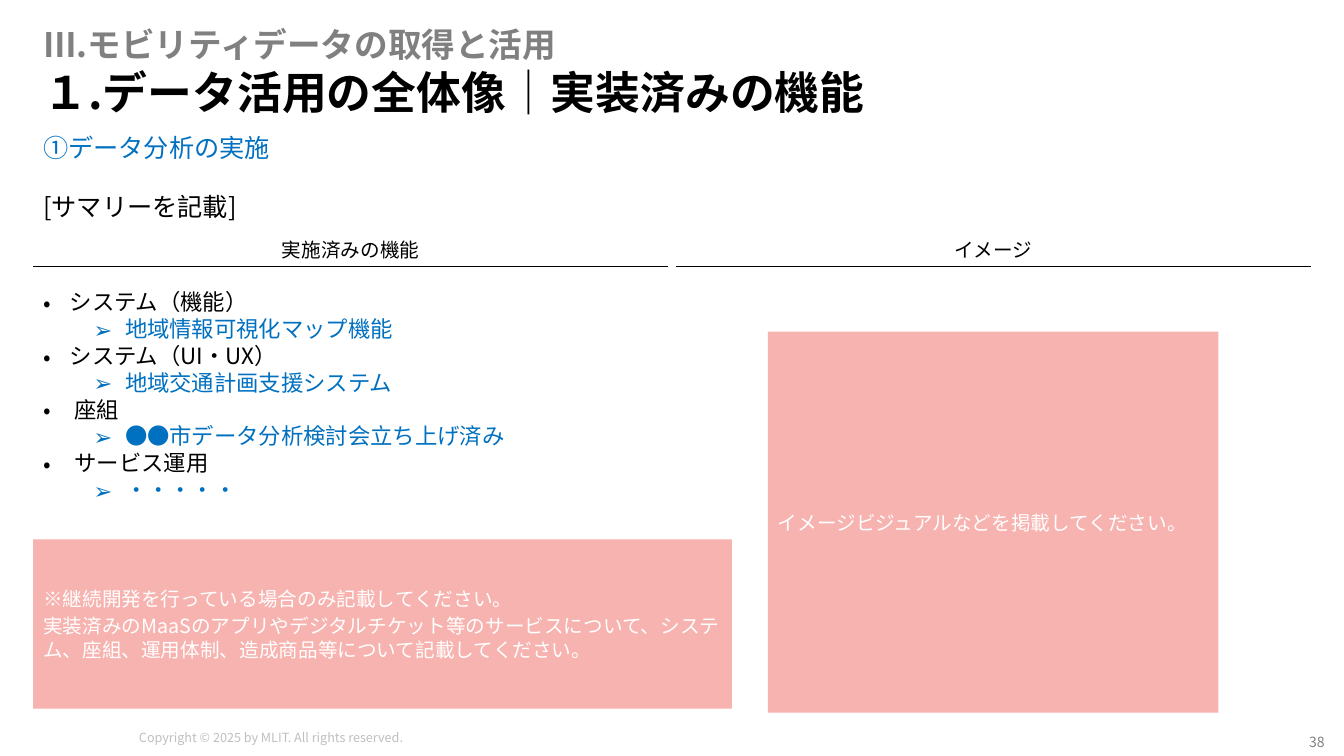
"""Build the slide on implemented data functions."""
import pptx
import pptx.util
import pptx.dml.color
import pptx.enum.shapes
import pptx.enum.text
import pptx.oxml.ns
import lxml.etree

Pt = pptx.util.Pt
Rgb = pptx.dml.color.RGBColor.from_string
Align = pptx.enum.text.PP_ALIGN
Anchor = pptx.enum.text.MSO_ANCHOR
Shape = pptx.enum.shapes.MSO_SHAPE

TITLE = "１.データ活用の全体像│実装済みの機能"
PART = "Ⅲ.モビリティデータの取得と活用"
TOPIC = "①データ分析の実施"
BRIEF = "[サマリーを記載]"
HEADS = ["実施済みの機能", "イメージ"]
ITEMS = [
    ("システム（機能）", 19, "地域情報可視化マップ機能"),
    ("システム（UI・UX）", 19, "地域交通計画支援システム"),
    ("座組", 22.5, "●●市データ分析検討会立ち上げ済み"),
    ("サービス運用", 22.5, "・・・・・"),
]
NOTES = [
    "※継続開発を行っている場合のみ記載してください。",
    "実装済みのMaaSのアプリやデジタルチケット等のサービスについて、"
    "システム、座組、運用体制、造成商品等について記載してください。",
]
IMAGE = "イメージビジュアルなどを掲載してください。"
RIGHTS = "Copyright © 2025 by MLIT. All rights reserved."
PAGE = "38"

THEME = {
    "font": "Noto Sans CJK JP",
    "ink": "000000", "blue": "0070C0", "gray": "808080", "pale": "BFBFBF",
    "white": "FFFFFF", "pink": "F3817B", "alpha": 60,
    "title": 32, "part": 24, "lead": 18, "list": 16, "note": 14,
    "page": 10, "rights": 9, "pitch": 1.2,
}
LEFT, WIDE = 23.75, 895.7
COL, STEP = 453.6, 459
HEAD_TOP, HEAD_H = 166.2, 24
NOTE_BOX = (LEFT, 385.2, 499, 121)
IMAGE_BOX = (548.6, 236.9, 321.8, 272.2)
SLIM = {"margin_top": 0, "margin_bottom": Pt(3.6)}
MID = {"vertical_anchor": Anchor.MIDDLE}


def apply(obj, form):
    """Set attributes from a dict."""
    for key, val in form.items():
        setattr(obj, key, val)


def sub(node, tag, **attrs):
    """Add a drawing element with attributes."""
    return lxml.etree.SubElement(node, pptx.oxml.ns.qn("a:" + tag), **attrs)


def write(par, text, size, color, bold=False, **form):
    """Write one run with its paragraph format."""
    kind = THEME[size]
    apply(par, {"line_spacing": Pt(kind * THEME["pitch"]), **form})
    run = par.add_run()
    run.text = text
    apply(run.font, {"size": Pt(kind), "bold": bold, "name": THEME["font"]})
    run.font.color.rgb = Rgb(THEME[color])
    sub(run.font._element, "ea", typeface=THEME["font"])


def label(slide, box, text, size, color, frame=None, **form):
    """Add a one-paragraph text box."""
    area = slide.shapes.add_textbox(*map(Pt, box)).text_frame
    apply(area, {"word_wrap": True, **(frame or {})})
    write(area.paragraphs[0], text, size, color, **form)


def panel(slide, box, fill, alpha=100):
    """Add a plain filled rectangle and return its text frame."""
    rect = slide.shapes.add_shape(Shape.RECTANGLE, *map(Pt, box))
    rect.shadow.inherit = False
    rect.fill.solid()
    rect.fill.fore_color.rgb = Rgb(THEME[fill])
    rect.line.fill.background()
    if alpha < 100:
        tint = rect._element.spPr.find(".//" + pptx.oxml.ns.qn("a:srgbClr"))
        sub(tint, "alpha", val=str(alpha * 1000))
    apply(rect.text_frame, {"word_wrap": True, **MID})
    return rect.text_frame


def rule(slide, left, top, width):
    """Add a thin level line."""
    line = slide.shapes.add_connector(
        pptx.enum.shapes.MSO_CONNECTOR.STRAIGHT,
        Pt(left), Pt(top), Pt(left + width), Pt(top))
    line.line.width = Pt(0.5)
    line.line.color.rgb = Rgb(THEME["ink"])
    sub(line._element.spPr, "effectLst")


def bullet(par, mark, left, hang):
    """Give a paragraph a hanging bullet."""
    props = par._p.get_or_add_pPr()
    props.set("marL", str(int(Pt(left))))
    props.set("indent", str(-int(Pt(hang))))
    sub(props, "buFont", typeface=THEME["font"])
    sub(props, "buChar", char=mark)


def heading(slide):
    """Fill the title and the lines around it."""
    title = slide.shapes.title
    apply(title, {"left": Pt(LEFT), "top": Pt(51.8),
                  "width": Pt(936), "height": Pt(33.8)})
    apply(title.text_frame, {
        "word_wrap": True, "auto_size": pptx.enum.text.MSO_AUTO_SIZE.NONE, **MID})
    write(title.text_frame.paragraphs[0], TITLE, "title", "ink", True,
          alignment=Align.LEFT, line_spacing=0.8)
    label(slide, (LEFT, 17.3, WIDE, 32.4), PART, "part", "gray",
          {**SLIM, **MID}, bold=True)
    label(slide, (LEFT, 94.3, WIDE, 25.2), TOPIC, "lead", "blue", SLIM)
    label(slide, (LEFT, 136.8, WIDE, 25.2), BRIEF, "lead", "ink", SLIM)


def columns(slide):
    """Add the two column heads."""
    for num, text in enumerate(HEADS):
        left = LEFT + num * STEP
        area = panel(slide, (left, HEAD_TOP, COL, HEAD_H), "white")
        write(area.paragraphs[0], text, "note", "ink",
              alignment=Align.CENTER, space_after=Pt(3))
        rule(slide, left, HEAD_TOP + HEAD_H, COL)


def listing(slide):
    """Add the bulleted functions."""
    area = slide.shapes.add_textbox(*map(Pt, (LEFT, 202.3, COL, 246.2))).text_frame
    area.word_wrap = True
    rows = [row for head, hang, item in ITEMS for row in (
        (0, head, "•", hang, hang, "ink"), (1, item, "➢", 58.5, 22.5, "blue"))]
    for num, (level, text, mark, left, hang, color) in enumerate(rows):
        par = area.add_paragraph() if num else area.paragraphs[0]
        bullet(par, mark, left, hang)
        write(par, text, "list", color, level=level)


def boxes(slide):
    """Add the two pink guide boxes."""
    for box, texts in ((NOTE_BOX, NOTES), (IMAGE_BOX, [IMAGE])):
        area = panel(slide, box, "pink", THEME["alpha"])
        for num, text in enumerate(texts):
            par = area.add_paragraph() if num else area.paragraphs[0]
            write(par, text, "note", "white", alignment=Align.LEFT,
                  space_before=Pt(3 if num else 0))


def footer(slide):
    """Add the rights line and page number."""
    label(slide, (92.2, 517.7, 249.8, 18), RIGHTS, "rights", "pale",
          {"word_wrap": False})
    edge = {"margin_" + side: Pt(2.9) for side in ("left", "top", "right", "bottom")}
    label(slide, (929.5, 521.3, 22.3, 18), PAGE, "page", "gray",
          {"word_wrap": False, **edge}, alignment=Align.CENTER)


def main():
    """Make and save the deck."""
    deck = pptx.Presentation()
    apply(deck, {"slide_width": Pt(960), "slide_height": Pt(540)})
    slide = deck.slides.add_slide(deck.slide_layouts[5])
    for build in (footer, heading, columns, listing, boxes):
        build(slide)
    deck.save("out.pptx")


if __name__ == "__main__":
    main()
